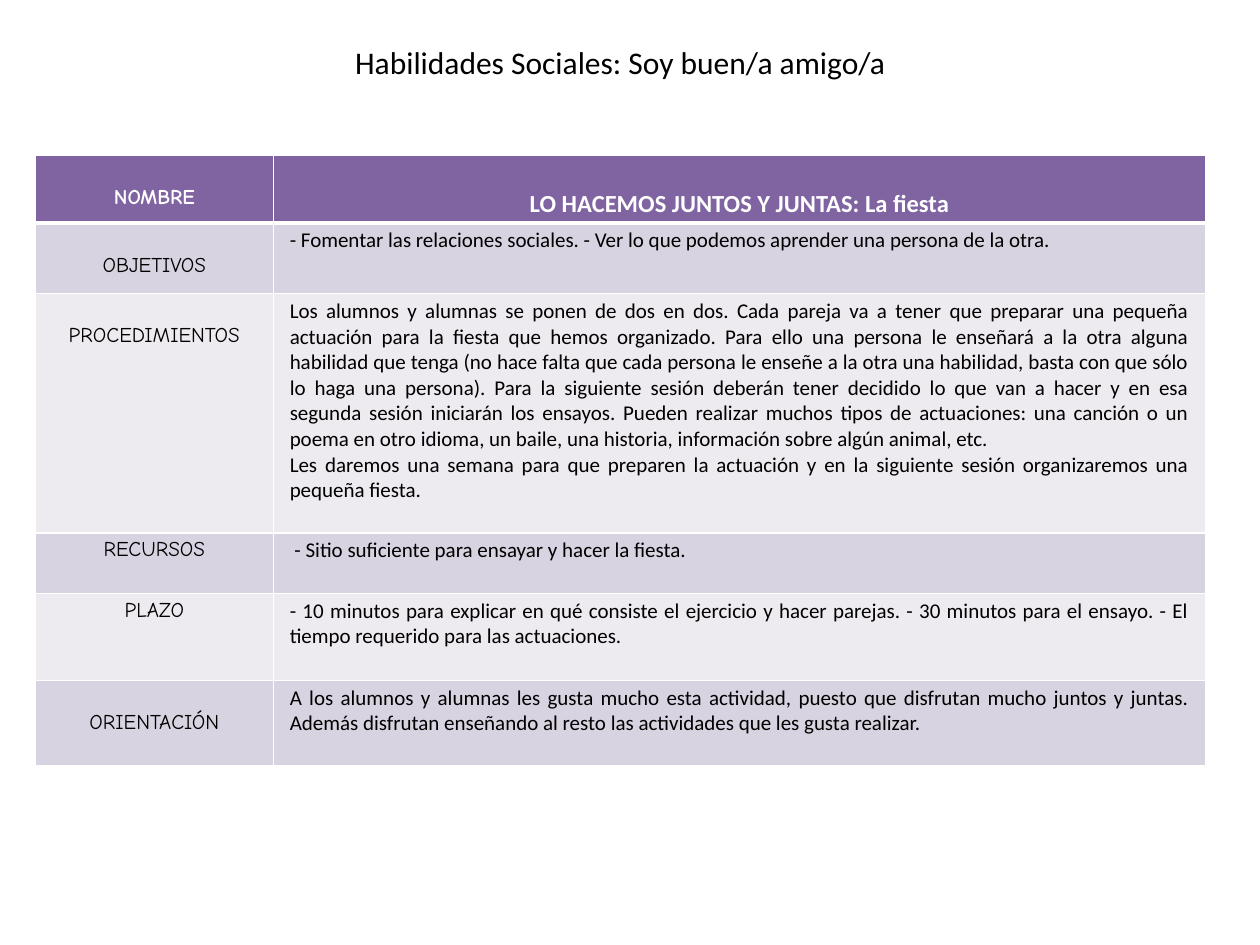
from lxml.etree import SubElement
from pptx import Presentation
from pptx.dml.color import RGBColor
from pptx.enum.text import MSO_ANCHOR, PP_ALIGN
from pptx.oxml.ns import qn
from pptx.util import Inches, Pt

COLORS = {
    "white": "FFFFFF",
    "black": "000000",
    "header": "8064A2",
    "odd": "D8D3E0",
    "even": "EDEAF0",
}
BODY_FONT = "Calibri"
LABEL_FONT = "Comic Neue"
COLUMN_WIDTHS = (1.89, 7.4)
LOW_TOP = 0.24
TOP = 0.04

ROWS = [
    ("NOMBRE", 0.54, LOW_TOP, ["LO HACEMOS JUNTOS Y JUNTAS: La fiesta"]),
    ("OBJETIVOS", 0.56, LOW_TOP, [
        "- Fomentar las relaciones sociales. - Ver lo que podemos aprender una persona de la otra."]),
    ("PROCEDIMIENTOS", 1.9, LOW_TOP, [
        "Los alumnos y alumnas se ponen de dos en dos. Cada pareja va a tener que preparar una "
        "pequeña actuación para la fiesta que hemos organizado. Para ello una persona le enseñará "
        "a la otra alguna habilidad que tenga (no hace falta que cada persona le enseñe a la otra "
        "una habilidad, basta con que sólo lo haga una persona). Para la siguiente sesión deberán "
        "tener decidido lo que van a hacer y en esa segunda sesión iniciarán los ensayos. Pueden "
        "realizar muchos tipos de actuaciones: una canción o un poema en otro idioma, un baile, "
        "una historia, información sobre algún animal, etc.",
        "Les daremos una semana para que preparen la actuación y en la siguiente sesión "
        "organizaremos una pequeña fiesta."]),
    ("RECURSOS", 0.48, TOP, [" - Sitio suficiente para ensayar y hacer la fiesta."]),
    ("PLAZO", 0.69, TOP, [
        "- 10 minutos para explicar en qué consiste el ejercicio y hacer parejas. - 30 minutos "
        "para el ensayo. - El tiempo requerido para las actuaciones."]),
    ("ORIENTACIÓN", 0.68, LOW_TOP, [
        "A los alumnos y alumnas les gusta mucho esta actividad, puesto que disfrutan mucho "
        "juntos y juntas. Además disfrutan enseñando al resto las actividades que les gusta "
        "realizar."]),
]


def color(name):
    """Return the named colour."""
    return RGBColor.from_string(COLORS[name])


def write(frame, texts, font, size, ink, align, bold=False):
    """Write each text as a one-run paragraph."""
    for index, text in enumerate(texts):
        para = frame.add_paragraph() if index else frame.paragraphs[0]
        para.alignment = align
        span = para.add_run()
        span.text = text
        span.font.name = font
        span.font.size = Pt(size)
        span.font.bold = bold
        span.font.color.rgb = color(ink)


def set_borders(cell, top, bottom):
    """Draw white cell borders, with top and bottom widths in points."""
    properties = cell._tc.get_or_add_tcPr()
    for side, width in (("L", 1), ("R", 1), ("T", top), ("B", bottom)):
        line = SubElement(properties, qn(f"a:ln{side}"), w=str(Pt(width)))
        fill = SubElement(line, qn("a:solidFill"))
        SubElement(fill, qn("a:srgbClr"), val=COLORS["white"])


def style_cell(cell, row, top_margin):
    """Set the borders, fill and margins of a cell in the given row."""
    set_borders(cell, 3 if row == 1 else 1, 3 if row == 0 else 1)
    cell.fill.solid()
    cell.fill.fore_color.rgb = color("header" if row == 0 else "odd" if row % 2 else "even")
    cell.margin_left = cell.margin_right = Inches(0.13)
    cell.margin_top = Inches(top_margin)
    cell.margin_bottom = Inches(0.02)
    cell.vertical_anchor = MSO_ANCHOR.TOP


def add_title(page, text):
    """Add the slide title."""
    box = page.shapes.add_textbox(Inches(2.72), Inches(0.29), Inches(4.8), Inches(0.4))
    box.text_frame.word_wrap = True
    write(box.text_frame, [text], BODY_FONT, 18, "black", PP_ALIGN.LEFT)


def add_activity_table(page):
    """Add the table that describes the activity."""
    height = sum(row[1] for row in ROWS)
    table = page.shapes.add_table(
        len(ROWS), len(COLUMN_WIDTHS), Inches(0.28), Inches(1.23),
        Inches(sum(COLUMN_WIDTHS)), Inches(height)).table
    for column, width in zip(table.columns, COLUMN_WIDTHS):
        column.width = Inches(width)
    for row, (label, row_height, label_top, texts) in enumerate(ROWS):
        header = row == 0
        ink = "white" if header else "black"
        table.rows[row].height = Inches(row_height)
        label_cell, text_cell = table.cell(row, 0), table.cell(row, 1)
        style_cell(label_cell, row, label_top)
        style_cell(text_cell, row, 0.27 if header else TOP)
        write(label_cell.text_frame, [label], LABEL_FONT, 12, ink, PP_ALIGN.CENTER, header)
        write(text_cell.text_frame, texts, BODY_FONT, 14 if header else 12, ink,
              PP_ALIGN.CENTER if header else PP_ALIGN.JUSTIFY, header)


def main():
    """Build and save the slide."""
    deck = Presentation()
    deck.slide_width, deck.slide_height = Inches(10), Inches(7.5)
    page = deck.slides.add_slide(deck.slide_layouts[6])
    add_activity_table(page)
    add_title(page, "Habilidades Sociales: Soy buen/a amigo/a")
    deck.save("out.pptx")


if __name__ == "__main__":
    main()
